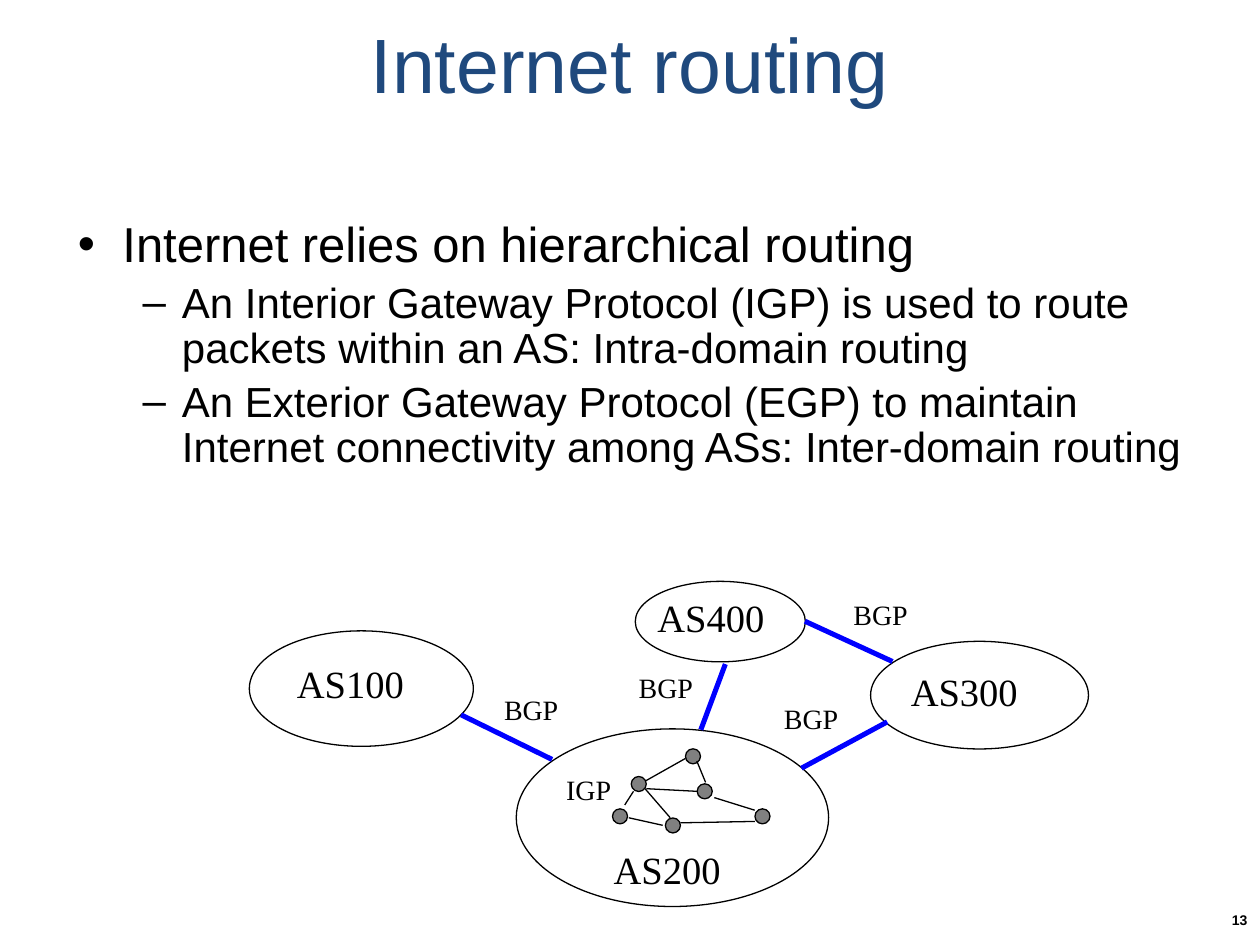
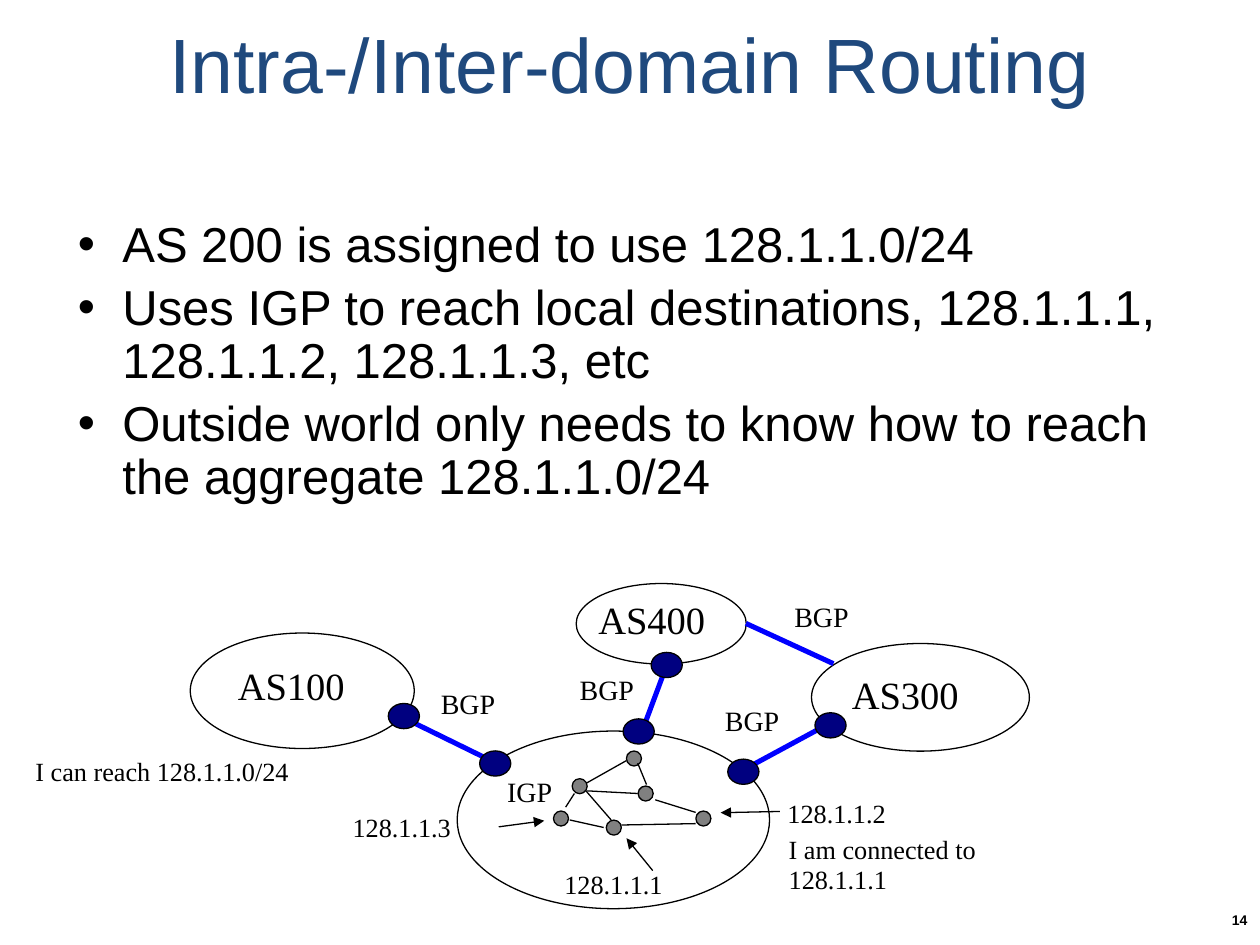
from dataclasses import dataclass

from lxml import etree
from pptx import Presentation
from pptx.dml.color import RGBColor
from pptx.enum.shapes import MSO_CONNECTOR, MSO_SHAPE
from pptx.enum.text import MSO_ANCHOR, MSO_AUTO_SIZE, PP_ALIGN
from pptx.oxml.ns import qn
from pptx.util import Pt

ELLIPSE = MSO_SHAPE.OVAL
STRAIGHT = MSO_CONNECTOR.STRAIGHT
MIDDLE, TOP = MSO_ANCHOR.MIDDLE, MSO_ANCHOR.TOP
LEFT, CENTER, RIGHT = PP_ALIGN.LEFT, PP_ALIGN.CENTER, PP_ALIGN.RIGHT
GROW, FIXED = MSO_AUTO_SIZE.SHAPE_TO_FIT_TEXT, MSO_AUTO_SIZE.NONE


@dataclass(frozen=True)
class Theme:
    sans: str = "Arial"
    serif: str = "Times New Roman"
    title: str = "1F497D"
    ink: str = "000000"
    link: str = "0000FF"
    node: str = "808080"
    border_router: str = "000080"
    title_size: float = 44
    body_sizes: tuple = (28, 24)
    as_size: float = 22
    protocol_size: float = 16
    address_size: float = 15
    number_size: float = 8
    thin: float = 0.75
    thick: float = 2.89


T = Theme()

# Bullet levels: character, left margin, hanging indent
LEVELS = [("•", 34, -25.5), ("–", 68, -22.5)]

# Network diagram, placed as on the first slide
AS_CLOUDS = [
    (142.5, 360.5, 128, 66),
    (295, 416.5, 178.5, 101.5),
    (497.5, 366.5, 124.5, 61.5),
    (363, 332.2, 97.2, 46),
]
AS_LABELS = {"AS100": (169.7, 378.5), "AS200": (350.7, 485),
             "AS300": (520.5, 383.5), "AS400": (375.7, 341)}
BGP_LINKS = [
    (263.5, 408.5, 315.5, 434),
    (458, 439, 507, 412.5),
    (460, 355, 510, 378),
    (414.5, 379.5, 400.5, 417),
]
BGP_LABELS = [(448, 402), (365, 384.3), (487.7, 342.5)]
IGP_LABEL = (323.5, 442.6)
NODES = [(365, 448), (402.7, 452.2), (384.5, 471.7),
         (396, 432.2), (354.3, 466.5), (435.7, 466.5)]
NODE_EDGES = [
    (362, 452.2, 357, 460),
    (359.3, 467.3, 378.7, 471.6),
    (368.6, 446.4, 391.7, 433.4),
    (368.6, 450.7, 383, 467.3),
    (369.4, 450.7, 398.2, 452.2),
    (398.2, 434.9, 403.2, 447.1),
    (388.8, 470.2, 431.3, 469.4),
    (408.2, 455.8, 431.3, 463),
]

# Details of the second slide
BORDER_ROUTERS = [(283, 436.3), (365, 418), (424.8, 441),
                  (230.8, 409.2), (381, 380), (474.6, 414.5)]
ADDRESSES = {"128.1.1.1": (322.5, 497.3), "128.1.1.3": (201.5, 464.5),
             "128.1.1.2": (450, 456.5)}
ADDRESS_ARROWS = [
    (285, 472.5, 311, 469),
    (373, 497.5, 358, 479),
    (445.7, 463.7, 411.8, 464.4),
]


def set_all(obj, values):
    for name, value in values.items():
        setattr(obj, name, value)


def text_box(slide, box, inset=(0, 0), wrap=True, anchor=TOP, size_mode=FIXED):
    tf = slide.shapes.add_textbox(*map(Pt, box)).text_frame
    side, end = map(Pt, inset)
    set_all(tf, dict(margin_left=side, margin_right=side, margin_top=end,
                     margin_bottom=end, word_wrap=wrap,
                     vertical_anchor=anchor, auto_size=size_mode))
    return tf


def write(p, text, font, size, color=T.ink, bold=False, **paragraph):
    set_all(p, paragraph)
    r = p.add_run()
    r.text = text
    set_all(r.font, dict(name=font, size=Pt(size), bold=bold))
    r.font.color.rgb = RGBColor.from_string(color)


def bullet(p, text, level):
    char, margin, indent = LEVELS[level]
    size = T.body_sizes[level]
    write(p, text, T.sans, size, level=level, line_spacing=0.9,
          space_before=Pt(0.2 * size))
    pPr = p._p.get_or_add_pPr()
    pPr.set("marL", str(Pt(margin)))
    pPr.set("indent", str(Pt(indent)))
    etree.SubElement(pPr, qn("a:buFont")).set("typeface", T.sans)
    etree.SubElement(pPr, qn("a:buChar")).set("char", char)


def label(slide, text, at, size, width, wrap=False):
    tf = text_box(slide, (*at, width, 1.17 * size), wrap=wrap, size_mode=GROW)
    write(tf.paragraphs[0], text, T.serif, size, alignment=LEFT,
          line_spacing=0.97)


def ellipse(slide, box, fill=None):
    sp = slide.shapes.add_shape(ELLIPSE, *map(Pt, box))
    sp.shadow.inherit = False
    if fill:
        sp.fill.solid()
        sp.fill.fore_color.rgb = RGBColor.from_string(fill)
    else:
        sp.fill.background()
    sp.line.color.rgb = RGBColor.from_string(T.ink)
    sp.line.width = Pt(T.thin)


def dot(slide, center, width, height, fill):
    x, y = center
    ellipse(slide, (x - width / 2, y - height / 2, width, height), fill)


def line(slide, ends, color=T.ink, width=T.thin, arrow=False):
    c = slide.shapes.add_connector(STRAIGHT, *map(Pt, ends))
    c.line.color.rgb = RGBColor.from_string(color)
    c.line.width = Pt(width)
    if arrow:
        etree.SubElement(c.line._get_or_add_ln(), qn("a:tailEnd")).set(
            "type", "triangle")
    etree.SubElement(c._element.spPr, qn("a:effectLst"))


def content_slide(prs, title, bullets, number):
    slide = prs.slides.add_slide(prs.slide_layouts[6])
    tf = text_box(slide, (36, 0, 648, 72), anchor=MIDDLE)
    write(tf.paragraphs[0], title, T.sans, T.title_size, T.title,
          alignment=CENTER)
    tf = text_box(slide, (36, 126, 648, 356.5))
    for i, (level, text) in enumerate(bullets):
        bullet(tf.add_paragraph() if i else tf.paragraphs[0], text, level)
    tf = text_box(slide, (670.5, 511, 49.5, 29), (7.2, 3.6), anchor=MIDDLE)
    write(tf.paragraphs[0], str(number), T.sans, T.number_size, bold=True,
          alignment=RIGHT)
    return slide


def network(slide, as_names, first_bgp, dx=0, dy=0):
    def at(x, y):
        return x + dx, y + dy

    def ends(x1, y1, x2, y2):
        return *at(x1, y1), *at(x2, y2)

    # Autonomous systems
    for x, y, w, h in AS_CLOUDS:
        ellipse(slide, (*at(x, y), w, h))
    for name in as_names:
        label(slide, name, at(*AS_LABELS[name]), T.as_size, 62)

    # Links between the systems
    for link in BGP_LINKS:
        line(slide, ends(*link), T.link, T.thick)
    for place in [first_bgp, *BGP_LABELS]:
        label(slide, "BGP", at(*place), T.protocol_size, 32)

    # Routers inside AS200
    for node in NODES:
        dot(slide, at(*node), 8.6, 8.6, T.node)
    for edge in NODE_EDGES:
        line(slide, ends(*edge))
    label(slide, "IGP", at(*IGP_LABEL), T.protocol_size, 27)


def routing_slide(prs):
    slide = content_slide(prs, "Internet routing", [
        (0, "Internet relies on hierarchical routing"),
        (1, "An Interior Gateway Protocol (IGP) is used to route packets "
            "within an AS: Intra-domain routing"),
        (1, "An Exterior Gateway Protocol (EGP) to maintain Internet "
            "connectivity among ASs: Inter-domain routing"),
    ], 13)
    network(slide, AS_LABELS, (288, 396.7))


def domains_slide(prs):
    slide = content_slide(prs, "Intra-/Inter-domain Routing", [
        (0, "AS 200 is assigned to use 128.1.1.0/24"),
        (0, "Uses IGP to reach local destinations, 128.1.1.1, 128.1.1.2, "
            "128.1.1.3, etc"),
        (0, "Outside world only needs to know how to reach the aggregate "
            "128.1.1.0/24"),
    ], 14)
    network(slide, ["AS100", "AS300", "AS400"], (285.7, 392.3), -33.75, 1.25)

    # Local addresses
    for address, place in ADDRESSES.items():
        label(slide, address, place, T.address_size, 58)
    for arrow in ADDRESS_ARROWS:
        line(slide, arrow, arrow=True)

    # Border routers and what they announce
    for router in BORDER_ROUTERS:
        dot(slide, router, 17.8, 14.4, T.border_router)
    label(slide, "I can reach 128.1.1.0/24", (20.2, 432.6), T.address_size,
          146)
    label(slide, "I am connected to 128.1.1.1", (450.7, 477),
          T.address_size, 164, wrap=True)


def main():
    prs = Presentation()
    set_all(prs, dict(slide_width=Pt(720), slide_height=Pt(540)))
    routing_slide(prs)
    domains_slide(prs)
    prs.save("out.pptx")


if __name__ == "__main__":
    main()
